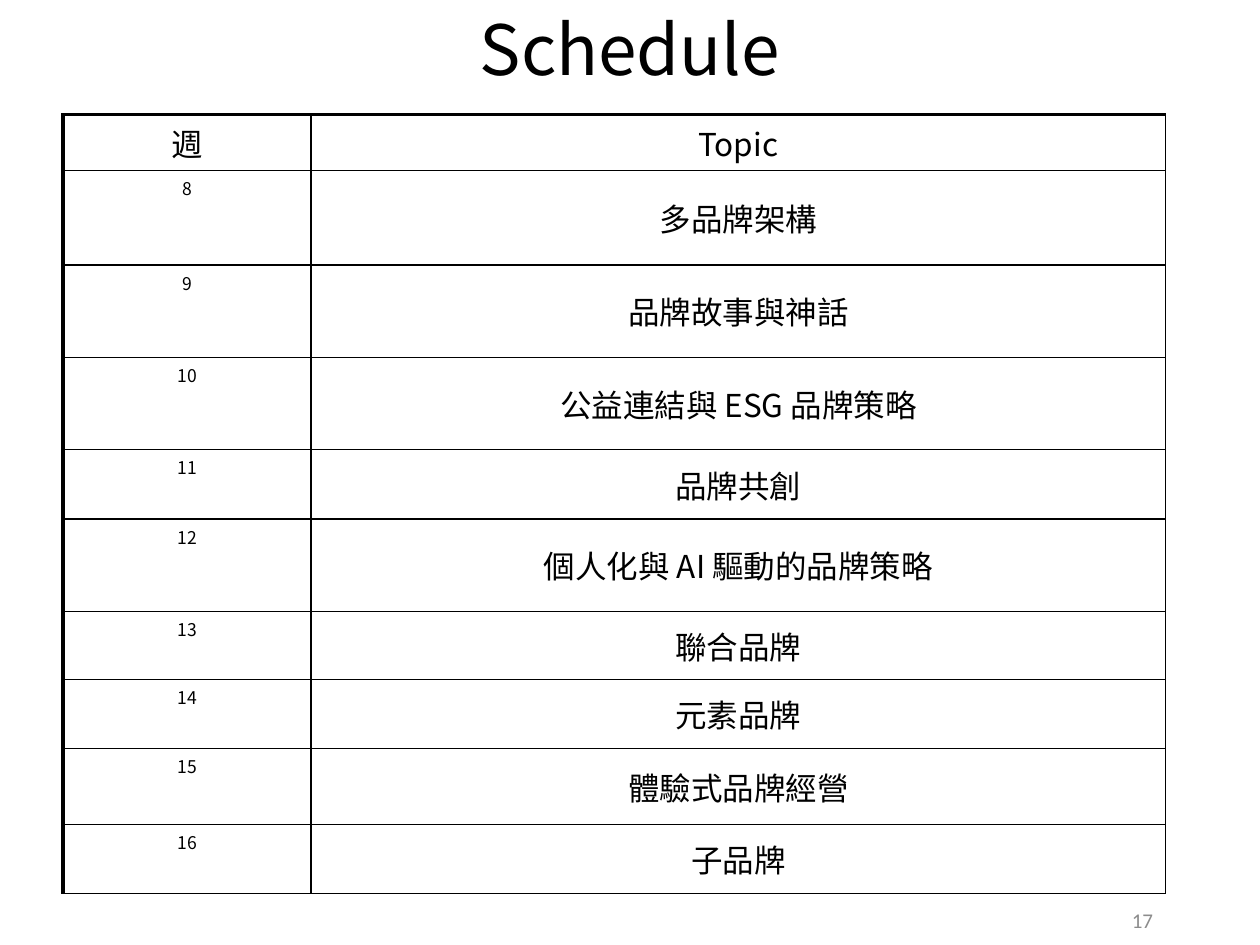
from lxml.etree import SubElement
from pptx import Presentation
from pptx.dml.color import RGBColor
from pptx.enum.text import MSO_ANCHOR as Anchor, PP_ALIGN as Align
from pptx.oxml.ns import qn
from pptx.util import Pt

COLORS = {"ink": "000000", "muted": "8C8C8C"}
CJK, LATIN = "Noto Sans CJK SC", "Calibri"
SCHEDULE = [
    ("8", "多品牌架構", 54),
    ("9", "品牌故事與神話", 52.8),
    ("10", "公益連結與 ESG 品牌策略", 52.8),
    ("11", "品牌共創", 39.6),
    ("12", "個人化與 AI 驅動的品牌策略", 52.8),
    ("13", "聯合品牌", 38.9),
    ("14", "元素品牌", 39.6),
    ("15", "體驗式品牌經營", 43.2),
    ("16", "子品牌", 39.6),
]


def write_text(frame, text, size, font=CJK, color="ink", align=Align.CENTER,
               anchor=Anchor.MIDDLE, before=0):
    """Fill a text frame with one formatted paragraph."""
    frame.word_wrap = True
    frame.vertical_anchor = anchor
    para = frame.paragraphs[0]
    para.alignment = align
    para.space_before = Pt(before)
    span = para.add_run()
    span.text = text
    span.font.size = Pt(size)
    span.font.name = font
    span.font.color.rgb = RGBColor.from_string(COLORS[color])
    SubElement(span.font._element, qn("a:ea"), typeface=font)


class SchedulePage:
    """Hold the table style and the current slide."""

    thin, thick = 1, 2.25
    inset_x, inset_y = 9.36, 2.88

    def __init__(self, deck):
        """Add a title-only slide to the deck."""
        self.page = deck.slides.add_slide(deck.slide_layouts[5])

    def place(self, shape, left, top, width, height):
        """Move and size a shape in points."""
        shape.left, shape.top = Pt(left), Pt(top)
        shape.width, shape.height = Pt(width), Pt(height)

    def title(self, text, area):
        """Format and fill the title placeholder."""
        box = self.page.shapes.title
        self.place(box, *area)
        write_text(box.text_frame, text, 39.6)

    def number(self, text, area):
        """Add the page number."""
        box = self.page.shapes.add_textbox(*map(Pt, area))
        write_text(box.text_frame, text, 12, LATIN, "muted", Align.RIGHT)

    def borders(self, cell, widths):
        """Draw the cell's left, right, top and bottom lines."""
        properties = cell._tc.get_or_add_tcPr()
        for side, width in zip("LRTB", widths):
            line = SubElement(properties, qn(f"a:ln{side}"), w=str(Pt(width)))
            fill = SubElement(line, qn("a:solidFill"))
            SubElement(fill, qn("a:srgbClr"), val=COLORS["ink"])

    def cell(self, cell, text, size, anchor, widths):
        """Style and fill one table cell."""
        cell.margin_left = cell.margin_right = Pt(self.inset_x)
        cell.margin_top = cell.margin_bottom = Pt(self.inset_y)
        self.borders(cell, widths)
        cell.fill.background()
        write_text(cell.text_frame, text, size, before=size * 0.2)
        cell.vertical_anchor = anchor

    def table(self, rows, left, top, columns):
        """Add a ruled table with a header in its first row."""
        height = sum(row[-1] for row in rows)
        area = map(Pt, (left, top, sum(columns), height))
        table = self.page.shapes.add_table(len(rows), len(columns), *area).table
        table.first_row = table.horz_banding = False
        for column, width in zip(table.columns, columns):
            column.width = Pt(width)
        for r, (*texts, height) in enumerate(rows):
            table.rows[r].height = Pt(height)
            for c, text in enumerate(texts):
                is_week = r > 0 and c == 0
                widths = (self.thin if c else self.thick, self.thin,
                          self.thin if r else self.thick, self.thin)
                self.cell(table.cell(r, c), text, 10 if is_week else 18,
                          Anchor.TOP if is_week else Anchor.MIDDLE, widths)


def main():
    """Build and save the schedule slide."""
    deck = Presentation()
    deck.slide_width, deck.slide_height = Pt(720), Pt(540)
    page = SchedulePage(deck)
    page.table([("週", "Topic", 31.6)] + SCHEDULE, 36, 65.6, (141.8, 488.2))
    page.number("17", (616.3, 517.7, 49.7, 16.6))
    page.title("Schedule", (36, 5.8, 648, 43.2))
    deck.save("out.pptx")


if __name__ == "__main__":
    main()
